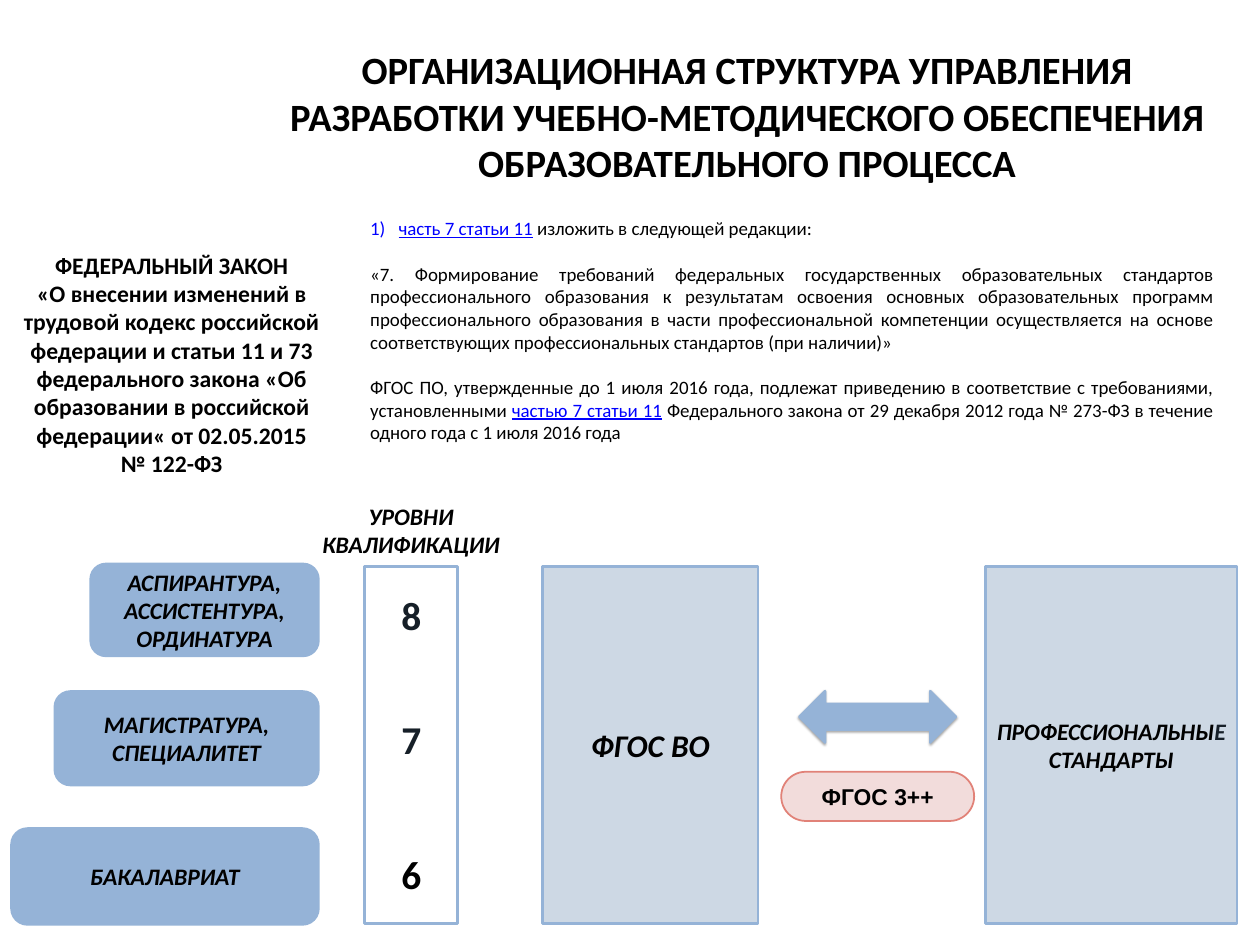
from lxml import etree
from pptx import Presentation
from pptx.dml.color import RGBColor
from pptx.enum.shapes import MSO_SHAPE as Shape
from pptx.enum.text import MSO_ANCHOR as Anchor, PP_ALIGN as Align
from pptx.oxml.ns import qn
from pptx.util import Pt

COLORS = {
    "text": "000000",
    "dark": "161F28",
    "link": "0000FF",
    "blue": "95B3D7",
    "pale": "CDD8E4",
    "pink": "F2DCDB",
    "coral": "E18278",
}


def color(name):
    return RGBColor.from_string(COLORS[name])


class SlideBuilder:
    def __init__(self, slide, font="Calibri"):
        self.slide = slide
        self.font = font

    def label(self, shape, paragraphs, size, ink="text", bold=True, italic=False,
              align=Align.CENTER, anchor=Anchor.MIDDLE, insets=(7.2, 3.6),
              wrap=True, gap=0, font=None):
        """Fill a shape; a paragraph is a string or a list of (text, colour) pieces."""
        frame = shape.text_frame
        frame.word_wrap = wrap
        frame.vertical_anchor = anchor
        frame.margin_left = frame.margin_right = Pt(insets[0])
        frame.margin_top = frame.margin_bottom = Pt(insets[1])
        for index, content in enumerate(paragraphs):
            paragraph = frame.add_paragraph() if index else frame.paragraphs[0]
            paragraph.alignment = align
            if index and gap:
                paragraph.space_before = Pt(gap)
            if isinstance(content, str):
                paragraph.text = content
                inks = [ink] * len(paragraph.runs)
            else:
                for piece, _ in content:
                    paragraph.add_run().text = piece
                inks = [piece_ink for _, piece_ink in content]
            for run, run_ink in zip(paragraph.runs, inks):
                run.font.name = font or self.font
                run.font.size = Pt(size)
                run.font.bold = bold
                run.font.italic = italic
                run.font.underline = run_ink == "link"
                run.font.color.rgb = color(run_ink)

    def text(self, left, top, width, height, paragraphs, size, anchor=Anchor.TOP, **style):
        box = self.slide.shapes.add_textbox(Pt(left), Pt(top), Pt(width), Pt(height))
        self.label(box, paragraphs, size, anchor=anchor, **style)
        return box

    def shape(self, kind, left, top, width, height, fill=None, line="blue", weight=3):
        shape = self.slide.shapes.add_shape(kind, Pt(left), Pt(top), Pt(width), Pt(height))
        shape.shadow.inherit = False
        if fill:
            shape.fill.solid()
            shape.fill.fore_color.rgb = color(fill)
        else:
            shape.fill.background()
        shape.line.color.rgb = color(line)
        shape.line.width = Pt(weight)
        return shape

    def number(self, paragraph, indent):
        """Number a paragraph as 1), with a hanging indent."""
        properties = paragraph._p.get_or_add_pPr()
        properties.set("marL", str(Pt(indent)))
        properties.set("indent", str(-Pt(indent)))
        etree.SubElement(properties, qn("a:buFont"), typeface="+mj-lt")
        etree.SubElement(properties, qn("a:buAutoNum"), type="arabicParenR")

    def cast_shadow(self, shape, blur, distance, opacity):
        """Drop a black shadow straight down; opacity is in percent."""
        effects = shape._element.spPr.find(qn("a:effectLst"))
        shadow = etree.SubElement(effects, qn("a:outerShdw"), blurRad=str(Pt(blur)),
                                  dist=str(Pt(distance)), dir="5400000", rotWithShape="0")
        shade = etree.SubElement(shadow, qn("a:srgbClr"), val=COLORS["text"])
        etree.SubElement(shade, qn("a:alpha"), val=str(opacity * 1000))


def build_header(builder):
    builder.text(297, 96, 1303, 101.5, [
        "ОРГАНИЗАЦИОННАЯ СТРУКТУРА УПРАВЛЕНИЯ\v"
        "РАЗРАБОТКИ УЧЕБНО-МЕТОДИЧЕСКОГО ОБЕСПЕЧЕНИЯ\v"
        "ОБРАЗОВАТЕЛЬНОГО ПРОЦЕССА"], 49, anchor=Anchor.MIDDLE, insets=(16, 8))
    builder.text(-1.5, 314.5, 439, 298, [
        "ФЕДЕРАЛЬНЫЙ ЗАКОН",
        "«О внесении изменений в трудовой кодекс российской федерации и статьи 11 и 73 "
        "федерального закона «Об образовании в российской федерации« от 02.05.2015",
        "№ 122-ФЗ"], 30)
    amendment = builder.text(463, 271.5, 1085, 298, [
        [("часть 7 статьи 11", "link"), (" изложить в следующей редакции:", "text")],
        "«7. Формирование требований федеральных государственных образовательных "
        "стандартов профессионального образования к результатам освоения основных "
        "образовательных программ профессионального образования в части "
        "профессиональной компетенции осуществляется на основе соответствующих "
        "профессиональных стандартов (при наличии)»",
        [("ФГОС ПО, утвержденные до 1 июля 2016 года, подлежат приведению в "
          "соответствие с требованиями, установленными ", "text"),
         ("частью 7 статьи 11", "link"),
         (" Федерального закона от 29 декабря 2012 года № 273-ФЗ в течение одного "
          "года с 1 июля 2016 года", "text")],
    ], 24, bold=False, align=Align.JUSTIFY, gap=29)
    builder.number(amendment.text_frame.paragraphs[0], 36)


def build_scheme(builder):
    column_top, column_height = 719.5, 453.5
    degrees_right = 404.5
    roomy = (15, 8)

    standards = [
        (689, 273.5, ["ФГОС ВО"], 40, roomy),
        (1251.5, 319.5, [[("ПРОФЕССИОНАЛЬНЫ", "text"), ("Е", "dark")],
                         "СТАНДАРТЫ"], 30, (8, 15)),
    ]
    for left, width, title, size, insets in standards:
        column = builder.shape(Shape.RECTANGLE, left, column_top, width, column_height, "pale")
        builder.label(column, title, size, italic=True, insets=insets)

    degrees = [
        (1052, 390, 122, ["БАКАЛАВРИАТ"]),
        (878, 335, 119, ["МАГИСТРАТУРА, СПЕЦИАЛИТЕТ"]),
        (716, 289.5, 117, ["АСПИРАНТУРА,", "АССИСТЕНТУРА,\vОРДИНАТУРА"]),
    ]
    for top, width, height, title in degrees:
        degree = builder.shape(Shape.ROUNDED_RECTANGLE, degrees_right - width, top,
                               width, height, "blue")
        builder.label(degree, title, 30, italic=True, insets=roomy)

    builder.shape(Shape.RECTANGLE, 463, column_top, 118, column_height)
    builder.text(392.5, 633.5, 259, 80, ["УРОВНИ КВАЛИФИКАЦИИ"], 30, italic=True)
    for level, top, ink in [("8", 746.5, "dark"), ("7", 905, "dark"), ("6", 1075.5, "text")]:
        builder.text(502.5, top, 40, 68, [level], 50, ink=ink, align=Align.LEFT, wrap=False)

    exchange = builder.shape(Shape.LEFT_RIGHT_ARROW, 1015, 877.5, 199, 65.5, "blue")
    builder.cast_shadow(exchange, 3.1, 1.8, 35)
    version = builder.shape(Shape.ROUNDED_RECTANGLE, 992, 980, 245, 62.5,
                            "pink", "coral", 2.25)
    version.adjustments[0] = 0.5
    builder.label(version, ["ФГОС 3++"], 29, font="Arial")


def main():
    deck = Presentation()
    deck.slide_width, deck.slide_height = Pt(1600), Pt(1200)
    builder = SlideBuilder(deck.slides.add_slide(deck.slide_layouts[6]))
    build_header(builder)
    build_scheme(builder)
    deck.save("out.pptx")


if __name__ == "__main__":
    main()
